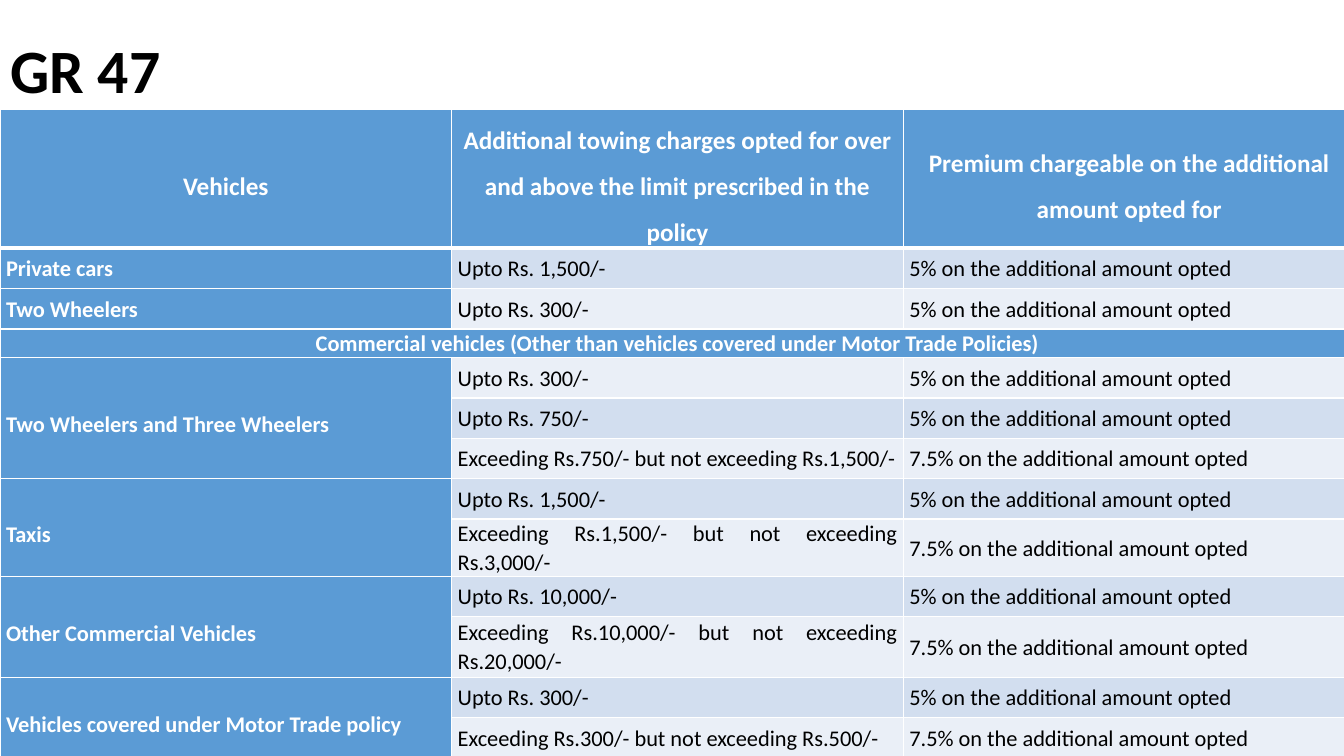
from lxml import etree
from pptx import Presentation
from pptx.dml.color import RGBColor
from pptx.enum import text
from pptx.oxml import ns
from pptx.util import Inches, Pt

FONT = "Calibri"
BLACK = RGBColor(0x00, 0x00, 0x00)
WHITE = RGBColor(0xFF, 0xFF, 0xFF)
BLUE = RGBColor(0x5B, 0x9B, 0xD5)
BAND_DARK = RGBColor(0xD2, 0xDE, 0xEF)
BAND_LIGHT = RGBColor(0xEA, 0xEF, 0xF7)

LEFT, CENTER, JUSTIFY = text.PP_ALIGN.LEFT, text.PP_ALIGN.CENTER, text.PP_ALIGN.JUSTIFY

HEADINGS = [
    "Vehicles",
    "Additional towing charges opted for over and above the limit prescribed in the policy",
    "Premium chargeable on the additional amount opted for",
]
COMMERCIAL = "Commercial vehicles (Other than vehicles covered under Motor Trade Policies)"
# Each vehicle class with its towing limits; a class without limits is a full-width band.
VEHICLES = [
    ("Private cars", ["Upto Rs. 1,500/-"]),
    ("Two Wheelers", ["Upto Rs. 300/-"]),
    (COMMERCIAL, []),
    ("Two Wheelers and Three Wheelers",
     ["Upto Rs. 300/-", "Upto Rs. 750/-", "Exceeding Rs.750/- but not exceeding Rs.1,500/-"]),
    ("Taxis",
     ["Upto Rs. 1,500/-", "Exceeding Rs.1,500/- but not exceeding Rs.3,000/-"]),
    ("Other Commercial Vehicles",
     ["Upto Rs. 10,000/-", "Exceeding Rs.10,000/- but not exceeding Rs.20,000/-"]),
    ("Vehicles covered under Motor Trade policy",
     ["Upto Rs. 300/-", "Exceeding Rs.300/- but not exceeding Rs.500/-"]),
]
ROW_HEIGHTS = [0.77, 0.4, 0.4, 0.2, 0.4, 0.4, 0.4, 0.4, 0.4, 0.4, 0.6, 0.4, 0.4]


def set_font(paragraph, size, color, bold):
    font = paragraph.font
    font.name, font.size, font.bold = FONT, Pt(size), bold
    font.color.rgb = color


def add_borders(cell, top, bottom):
    """Draw white cell borders; top and bottom are widths in points."""
    properties = cell._tc.get_or_add_tcPr()
    for index, (side, width) in enumerate([("L", 1), ("R", 1), ("T", top), ("B", bottom)]):
        line = etree.Element(ns.qn(f"a:ln{side}"), w=str(Pt(width)))
        fill = etree.SubElement(line, ns.qn("a:solidFill"))
        etree.SubElement(fill, ns.qn("a:srgbClr"), val=str(WHITE))
        properties.insert(index, line)


def style_cell(cell, fill, top=1, bottom=1):
    cell.margin_left = cell.margin_right = Inches(0.06)
    cell.margin_top = cell.margin_bottom = 0
    cell.vertical_anchor = text.MSO_ANCHOR.MIDDLE
    cell.fill.solid()
    cell.fill.fore_color.rgb = fill
    add_borders(cell, top, bottom)


def write_cell(cell, words, align, spacing, size=16, color=WHITE, bold=True):
    cell.text = words
    paragraph = cell.text_frame.paragraphs[0]
    paragraph.alignment, paragraph.line_spacing = align, spacing
    set_font(paragraph, size, color, bold)


def fill_vehicle(table, row, vehicle, limits):
    """Write one vehicle class from the given row on and return the next free row."""
    label = table.cell(row, 0)
    if not limits:
        label.merge(table.cell(row, 2))
        write_cell(label, vehicle, CENTER, 1.05)
        return row + 1
    if len(limits) > 1:
        label.merge(table.cell(row + len(limits) - 1, 0))
    write_cell(label, vehicle, LEFT, 1.5 if len(limits) > 1 else 1.05)
    for offset, limit in enumerate(limits):
        rate = "7.5%" if limit.startswith("Exceeding") else "5%"
        premium = f"{rate} on the additional amount opted"
        for column, words in enumerate([limit, premium], start=1):
            write_cell(table.cell(row + offset, column), words, JUSTIFY, 1.05,
                       color=BLACK, bold=False)
    return row + len(limits)


def add_title(slide, left, top, width, height):
    title = slide.shapes.title
    title.left, title.top, title.width, title.height = left, top, width, height
    title.text_frame.text = "GR 47"
    title.text_frame.vertical_anchor = text.MSO_ANCHOR.MIDDLE
    paragraph = title.text_frame.paragraphs[0]
    paragraph.alignment, paragraph.line_spacing = LEFT, 0.9
    set_font(paragraph, 44, BLACK, True)


def add_premium_table(slide, left, top, width, height):
    table = slide.shapes.add_table(
        len(ROW_HEIGHTS), len(HEADINGS), left, top, width, height).table
    for column in table.columns:
        column.width = width // len(HEADINGS)
    for index, row_height in enumerate(ROW_HEIGHTS):
        table.rows[index].height = Inches(row_height)
        band = BAND_DARK if index % 2 else BAND_LIGHT
        for column in range(len(HEADINGS)):
            style_cell(table.cell(index, column),
                       BLUE if index == 0 or column == 0 else band,
                       top=3 if index == 1 else 1, bottom=3 if index == 0 else 1)
    for column, heading in enumerate(HEADINGS):
        write_cell(table.cell(0, column), heading, CENTER, 1.5, size=18)
    row = 1
    for vehicle, limits in VEHICLES:
        row = fill_vehicle(table, row, vehicle, limits)


def main():
    presentation = Presentation()
    presentation.slide_width, presentation.slide_height = Inches(13.33), Inches(7.5)
    slide = presentation.slides.add_slide(presentation.slide_layouts[5])
    add_title(slide, 0, 0, Inches(11.5), Inches(1.45))
    add_premium_table(slide, 0, Inches(1.09), Inches(13.44), Inches(sum(ROW_HEIGHTS)))
    presentation.save("out.pptx")


if __name__ == "__main__":
    main()
